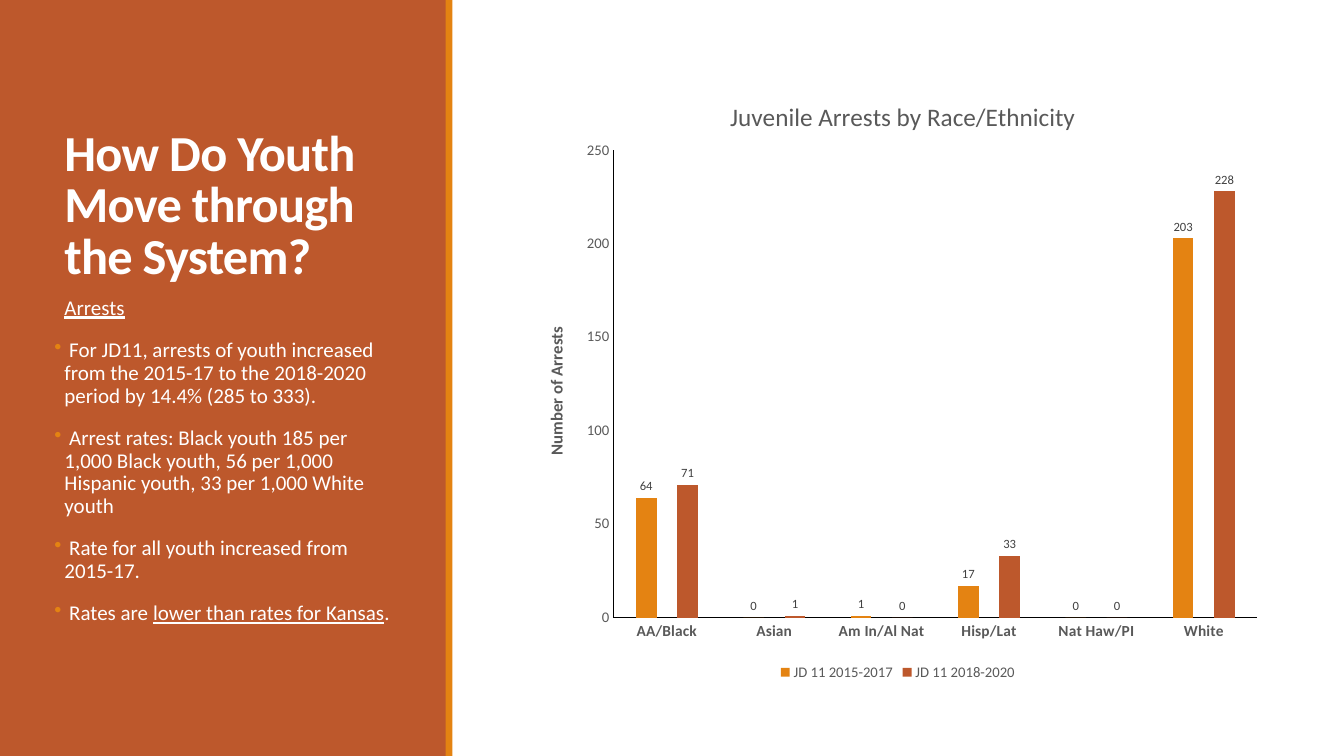
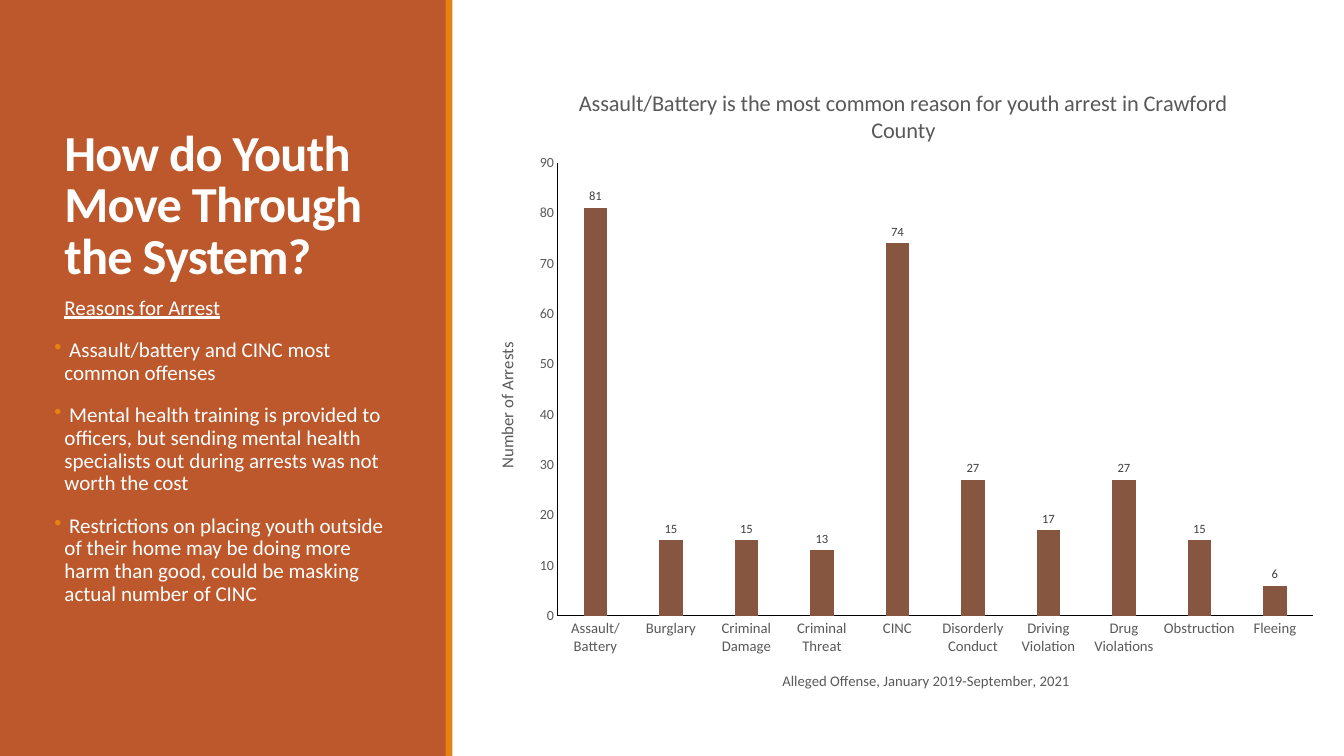
from lxml import etree
from pptx import Presentation
from pptx import util as u
from pptx.chart.data import CategoryChartData
from pptx.dml.color import RGBColor
from pptx.enum import chart as charts, shapes, text
from pptx.oxml import ns

RUST = RGBColor(0xBD, 0x58, 0x2C)
ORANGE = RGBColor(0xE4, 0x83, 0x12)
BROWN = RGBColor(0x86, 0x56, 0x40)
WHITE = RGBColor(0xFF, 0xFF, 0xFF)
BLACK = RGBColor(0x00, 0x00, 0x00)
GREY = RGBColor(0x59, 0x59, 0x59)
DARK_GREY = RGBColor(0x40, 0x40, 0x40)


class Deck:
    FONT = "Calibri"
    COLUMNS = ROWS = 100
    TEXT_LEFT, TEXT_WIDTH = 4.05, 25.3
    BULLET_INDENT = u.Inches(0.1)

    def __init__(self):
        self.presentation = Presentation()
        self.presentation.slide_width = u.Inches(13.33)
        self.presentation.slide_height = u.Inches(7.5)
        self.slide = None

    def box(self, left, top, width, height):
        column = self.presentation.slide_width / self.COLUMNS
        row = self.presentation.slide_height / self.ROWS
        return (round(left * column), round(top * row),
                round(width * column), round(height * row))

    def add_slide(self, title, heading, bullets):
        layout = self.presentation.slide_layouts[6]
        self.slide = self.presentation.slides.add_slide(layout)
        self.band(0, 33.23, RUST)
        self.band(33.16, 0.5, ORANGE)
        self.title(title)
        self.body(heading, bullets)

    def band(self, left, width, color):
        shape = self.slide.shapes.add_shape(
            shapes.MSO_SHAPE.RECTANGLE, *self.box(left, 0, width, self.ROWS))
        shape.shadow.inherit = False
        shape.fill.solid()
        shape.fill.fore_color.rgb = color
        shape.line.fill.background()

    def text_box(self, top, height):
        shape = self.slide.shapes.add_textbox(
            *self.box(self.TEXT_LEFT, top, self.TEXT_WIDTH, height))
        shape.text_frame.word_wrap = True
        return shape.text_frame

    def style(self, font, size, color, bold=False):
        font.name = self.FONT
        font.size = u.Pt(size)
        font.bold = bold
        font.color.rgb = color

    def run(self, paragraph, words, size, color, bold=False, underline=False):
        run = paragraph.add_run()
        run.text = words
        self.style(run.font, size, color, bold)
        run.font.underline = underline
        return run

    def title(self, words):
        frame = self.text_box(7.6, 30.67)
        frame.vertical_anchor = text.MSO_ANCHOR.BOTTOM
        paragraph = frame.paragraphs[0]
        paragraph.line_spacing = 0.85
        run = self.run(paragraph, words, 36, WHITE, bold=True)
        run._r.get_or_add_rPr().set("spc", "-50")

    def body(self, heading, bullets):
        frame = self.text_box(38.67, 48.67)
        frame.margin_left = frame.margin_right = 0
        paragraph = frame.paragraphs[0]
        self.body_paragraph(paragraph, [(heading, True)])
        for bullet in bullets:
            runs = [(bullet, False)] if isinstance(bullet, str) else bullet
            paragraph = frame.add_paragraph()
            self.body_paragraph(paragraph, runs)
            self.bullet(paragraph)

    def body_paragraph(self, paragraph, runs):
        paragraph.line_spacing = 0.9
        paragraph.space_before = u.Pt(12)
        paragraph.space_after = u.Pt(2)
        paragraph._p.get_or_add_pPr().set("marL", str(self.BULLET_INDENT))
        for words, underline in runs:
            self.run(paragraph, words, 15, WHITE, underline=underline)

    def bullet(self, paragraph):
        properties = paragraph._p.get_or_add_pPr()
        properties.set("indent", str(-self.BULLET_INDENT))
        color = etree.SubElement(properties, ns.qn("a:buClr"))
        etree.SubElement(color, ns.qn("a:srgbClr"), val=str(ORANGE))
        etree.SubElement(properties, ns.qn("a:buChar"), char="•")

    def place(self, element, index, **shares):
        for old in element.findall(ns.qn("c:layout")):
            element.remove(old)
        layout = etree.Element(ns.qn("c:layout"))
        manual = etree.SubElement(layout, ns.qn("c:manualLayout"))
        if "w" in shares:
            etree.SubElement(manual, ns.qn("c:layoutTarget"), val="inner")
        for side in "xy":
            etree.SubElement(manual, ns.qn(f"c:{side}Mode"), val="edge")
        for side, share in shares.items():
            etree.SubElement(manual, ns.qn(f"c:{side}"), val=str(share))
        element.insert(index, layout)

    def chart_words(self, title, words, size, bold=False):
        paragraph = title.text_frame.paragraphs[0]
        self.run(paragraph, words, size, GREY, bold)

    def axis(self, axis, size, bold=False):
        axis.has_major_gridlines = False
        axis.major_tick_mark = charts.XL_TICK_MARK.NONE
        axis.minor_tick_mark = charts.XL_TICK_MARK.NONE
        self.style(axis.tick_labels.font, size, GREY, bold)
        axis.format.line.color.rgb = BLACK
        axis.format.line.width = u.Pt(0.75)

    def column_chart(self, box, title, title_size, title_place, plot_place,
                     categories, series, overlap, top_value, step,
                     category_size, value_size, bold=False):
        data = CategoryChartData()
        data.categories = categories
        for name, values, _ in series:
            data.add_series(name, values)
        chart = self.slide.shapes.add_chart(
            charts.XL_CHART_TYPE.COLUMN_CLUSTERED, *self.box(*box), data).chart
        self.style(chart.font, 10, BLACK)
        chart.has_legend = False
        chart.has_title = True
        self.chart_words(chart.chart_title, title, title_size)
        self.place(chart.chart_title._element, 1, **title_place)
        self.place(chart._chartSpace.chart.plotArea, 0, **plot_place)
        self.axis(chart.category_axis, category_size, bold)
        self.axis(chart.value_axis, value_size)
        chart.value_axis.minimum_scale = 0
        chart.value_axis.maximum_scale = top_value
        chart.value_axis.major_unit = step
        self.chart_words(chart.value_axis.axis_title, "Number of Arrests", 12, bold)
        plot = chart.plots[0]
        plot.vary_by_categories = False
        plot.gap_width = 219
        plot.overlap = overlap
        for columns, (_, _, color) in zip(plot.series, series):
            columns.format.fill.solid()
            columns.format.fill.fore_color.rgb = color
            labels = columns.data_labels
            labels.show_value = True
            labels.position = charts.XL_LABEL_POSITION.OUTSIDE_END
            self.style(labels.font, 9, DARK_GREY)
        return chart

    def legend(self, chart):
        chart.has_legend = True
        chart.legend.position = charts.XL_LEGEND_POSITION.BOTTOM
        chart.legend.include_in_layout = False
        self.style(chart.legend.font, 10.5, GREY)


def main():
    deck = Deck()

    deck.add_slide("How Do Youth Move through the System?", "Arrests", [
        " For JD11, arrests of youth increased from the 2015-17 to the "
        "2018-2020 period by 14.4% (285 to 333).",
        " Arrest rates: Black youth 185 per 1,000 Black youth, 56 per 1,000 "
        "Hispanic youth, 33 per 1,000 White youth",
        " Rate for all youth increased from 2015-17.",
        [(" Rates are ", False), ("lower than rates for Kansas", True),
         (".", False)],
    ])
    arrests = deck.column_chart(
        (38.94, 9.33, 55.74, 81.33),
        "Juvenile Arrests by Race/Ethnicity", 18, dict(x=0.27, y=0.04),
        dict(x=0.12, y=0.13, w=0.86, h=0.76),
        ["AA/Black", "Asian", "Am In/Al Nat", "Hisp/Lat", "Nat Haw/PI", "White"],
        [("JD 11 2015-2017", [64, 0, 1, 17, 0, 203], ORANGE),
         ("JD 11 2018-2020", [71, 1, 0, 33, 0, 228], RUST)],
        overlap=-100, top_value=250, step=50,
        category_size=11, value_size=10.5, bold=True)
    deck.legend(arrests)

    deck.add_slide("How do Youth Move Through the System?", "Reasons for Arrest", [
        " Assault/battery and CINC most common offenses",
        " Mental health training is provided to officers, but sending mental "
        "health specialists out during arrests was not worth the cost",
        " Restrictions on placing youth outside of their home may be doing "
        "more harm than good, could be masking actual number of CINC",
    ])
    reasons = deck.column_chart(
        (35.11, 7.6, 63.84, 86.93),
        "Assault/Battery is the most common reason for youth arrest in "
        "Crawford County", 16, dict(x=0.12, y=0.04),
        dict(x=0.1, y=0.16, w=0.88, h=0.69),
        ["Assault/Battery", "Burglary", "Criminal Damage", "Criminal Threat",
         "CINC", "Disorderly Conduct", "Driving Violation", "Drug Violations",
         "Obstruction", "Fleeing"],
        [("Series 1", [81, 15, 15, 13, 74, 27, 17, 27, 15, 6], BROWN)],
        overlap=-27, top_value=90, step=10,
        category_size=10.5, value_size=10)
    deck.chart_words(reasons.category_axis.axis_title,
                     "Alleged Offense, January 2019-September, 2021", 10.5)

    deck.presentation.save("out.pptx")


if __name__ == "__main__":
    main()
